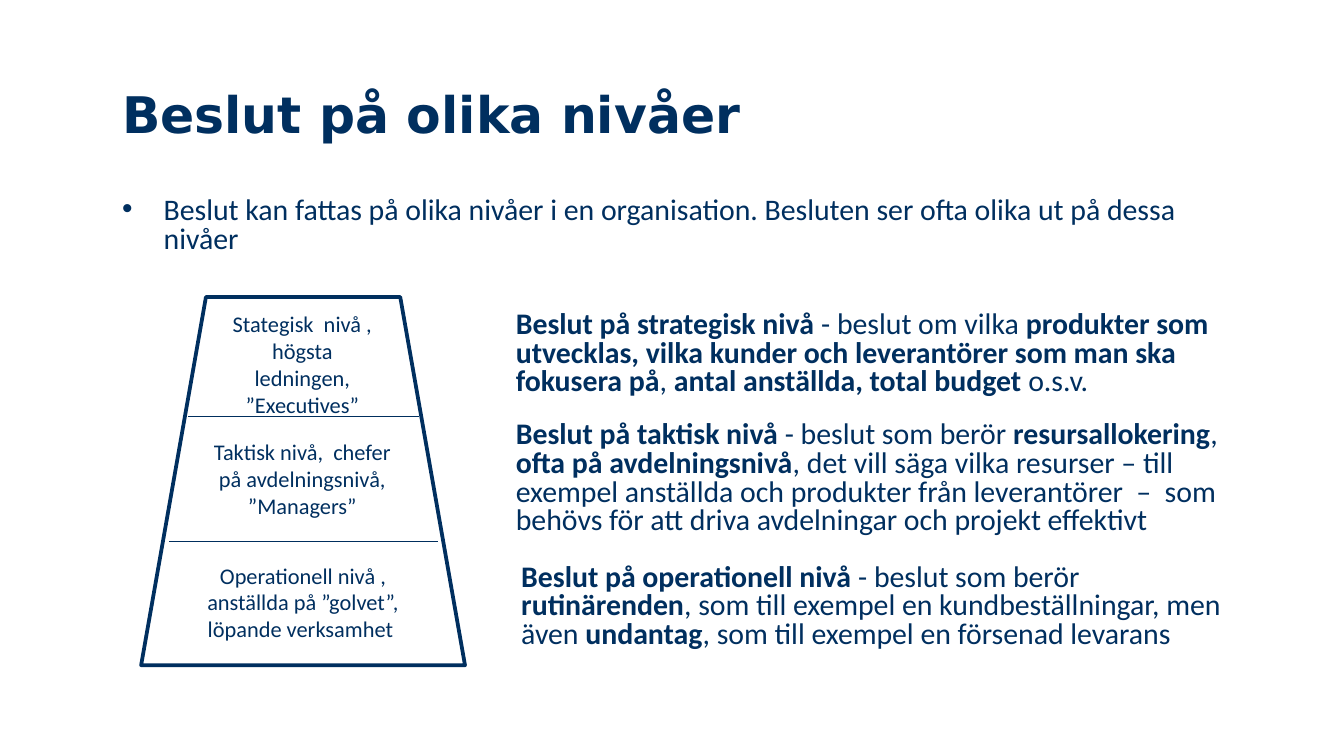
from lxml import etree
from pptx import Presentation
from pptx import util as u
from pptx.dml.color import RGBColor
from pptx.enum import shapes, text
from pptx.oxml.ns import qn

COLORS = {"navy": "002F5F", "rule": "002E5D", "white": "FFFFFF"}
INDENT = 0.31

LABELS = [
    (1.63, 2.26, 1.24, 0.91, 0.1, "Stategisk  nivå , högsta ledningen, ”Executives”"),
    (1.46, 3.21, 1.58, 0.71, 0.1, "Taktisk nivå,  chefer på avdelningsnivå, ”Managers”"),
    (1.22, 4.13, 2.07, 0.71, 0.2, "Operationell nivå , anställda på ”golvet”, löpande verksamhet "),
]

LEVELS = [
    (3.74, 2.27, 5.76, 0.75, [
        "Beslut på strategisk nivå ", "- beslut om vilka ",
        "produkter som utvecklas, vilka kunder och leverantörer som man ska fokusera på",
        ", ", "antal anställda, total budget ", "o.s.v."]),
    (3.74, 3.09, 5.53, 0.96, [
        "Beslut på taktisk nivå ", "- beslut som berör ", "resursallokering",
        ", ", "ofta på avdelningsnivå",
        ", det vill säga vilka resurser – till exempel anställda och produkter "
        "från leverantörer  –  som behövs för att driva avdelningar och projekt effektivt"]),
    (3.78, 4.15, 5.62, 0.75, [
        "Beslut på operationell nivå ", "- beslut som berör ", "rutinärenden",
        ", som till exempel en kundbeställningar, men även ", "undantag",
        ", som till exempel en försenad levarans"]),
]


def color(name):
    return RGBColor.from_string(COLORS[name])


def add_text(slide, box, runs, size, font="Calibri", side=0.1):
    frame = slide.shapes.add_textbox(*map(u.Inches, box)).text_frame
    frame.word_wrap = True
    frame.margin_left = frame.margin_right = u.Inches(side)
    para = frame.paragraphs[0]
    for words, bold in runs:
        run = para.add_run()
        run.text = words
        run.font.name = font
        run.font.size = u.Pt(size)
        run.font.bold = bold
        run.font.color.rgb = color("navy")
    return para


def add_bullet(para):
    props = para._p.get_or_add_pPr()
    props.set("marL", str(u.Inches(INDENT)))
    props.set("indent", str(-u.Inches(INDENT)))
    etree.SubElement(props, qn("a:buFont")).set("typeface", "Arial")
    etree.SubElement(props, qn("a:buChar")).set("char", "•")


def add_tower(slide):
    tower = slide.shapes.add_shape(
        shapes.MSO_SHAPE.FLOWCHART_MANUAL_OPERATION,
        *map(u.Inches, (1.05, 2.21, 2.41, 2.74)))
    tower.rotation = 180
    tower.shadow.inherit = False
    tower.fill.solid()
    tower.fill.fore_color.rgb = color("white")
    tower.line.color.rgb = color("navy")
    tower.line.width = u.Pt(2)


def add_rule(slide, left, right, y):
    rule = slide.shapes.add_connector(
        shapes.MSO_CONNECTOR.STRAIGHT, *map(u.Inches, (left, y, right, y)))
    rule.line.color.rgb = color("rule")
    rule.line.width = u.Pt(0.75)
    etree.SubElement(rule._element.spPr, qn("a:effectLst"))


def main():
    deck = Presentation()
    deck.slide_width = u.Inches(10)
    deck.slide_height = deck.slide_width * 9 // 16
    slide = deck.slides.add_slide(deck.slide_layouts[6])

    add_text(slide, (0.81, 0.57, 7.06, 0.94), [("Beslut på olika nivåer", True)],
             27, "DejaVu Sans")
    add_tower(slide)
    add_rule(slide, 1.4, 3.12, 3.1)
    add_rule(slide, 1.26, 3.26, 4.03)

    for *box, side, words in LABELS:
        para = add_text(slide, box, [(words, False)], 12, side=side)
        para.alignment = text.PP_ALIGN.CENTER

    intro = ("Beslut kan fattas på olika nivåer i en organisation. "
             "Besluten ser ofta olika ut på dessa nivåer")
    para = add_text(slide, (0.81, 1.42, 8.47, 0.53), [(intro, False)], 16)
    add_bullet(para)
    para.line_spacing = 0.8

    for *box, parts in LEVELS:
        runs = [(words, i % 2 == 0) for i, words in enumerate(parts)]
        add_text(slide, box, runs, 16).line_spacing = 0.8

    deck.save("out.pptx")


if __name__ == "__main__":
    main()
